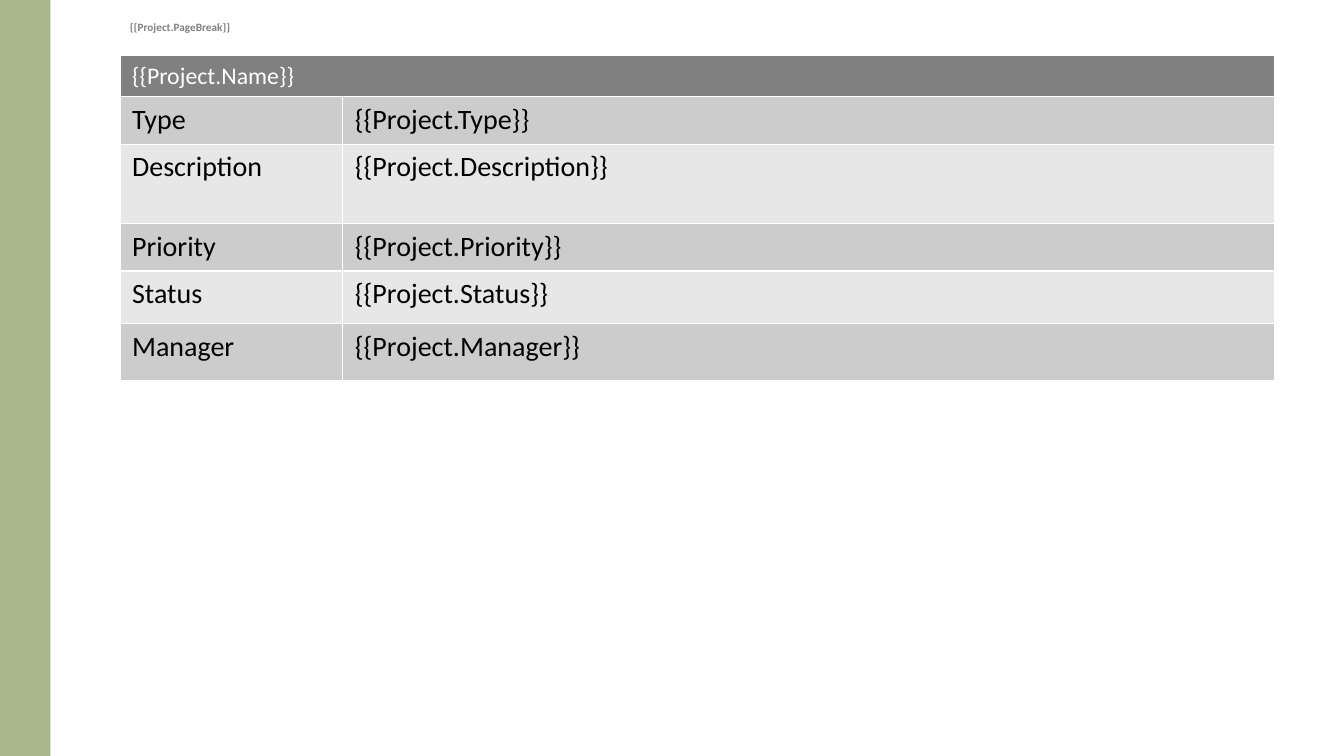
from lxml import etree
from pptx import Presentation
from pptx.dml.color import RGBColor
from pptx.enum import shapes
from pptx.oxml import ns
from pptx.util import Inches, Pt

FONT = "Calibri"


def rgb(value):
    return RGBColor.from_string(value)


def add_borders(cell, color, points):
    """Draw all four sides of a table cell; call before setting its fill."""
    properties = cell._tc.get_or_add_tcPr()
    for side in ("lnL", "lnR", "lnT", "lnB"):
        line = etree.SubElement(properties, ns.qn(f"a:{side}"), w=str(Pt(points)))
        fill = etree.SubElement(line, ns.qn("a:solidFill"))
        etree.SubElement(fill, ns.qn("a:srgbClr"), val=color)


prs = Presentation()
prs.slide_width, prs.slide_height = Inches(13.33), Inches(7.5)
slide = prs.slides.add_slide(prs.slide_layouts[6])

side_band = slide.shapes.add_shape(
    shapes.MSO_SHAPE.RECTANGLE, 0, 0, Inches(0.5), prs.slide_height)
side_band.shadow.inherit = False
side_band.fill.solid()
side_band.fill.fore_color.rgb = rgb("A7B789")
side_band.line.fill.background()

# Project table: a merged heading row, then one row per field
fields = ["Type", "Description", "Priority", "Status", "Manager"]
rows = [("{{Project.Name}}", "")]
rows += [(field, "{{Project.%s}}" % field) for field in fields]
row_heights = [0.41, 0.47, 0.79, 0.47, 0.52, 0.57]
column_widths = [2.21, 9.24]

project = slide.shapes.add_table(
    len(rows), 2, Inches(1.19), Inches(0.55),
    Inches(sum(column_widths)), Inches(sum(row_heights))).table
for column, width in zip(project.columns, column_widths):
    column.width = Inches(width)

for r, (values, height) in enumerate(zip(rows, row_heights)):
    project.rows[r].height = Inches(height)
    if r == 0:
        fill, ink, size = "808080", "FFFFFF", 17
    else:
        fill, ink, size = "CCCCCC" if r % 2 else "E7E7E7", "000000", 20
    for c, value in enumerate(values):
        cell = project.cell(r, c)
        cell.margin_left = cell.margin_right = Inches(0.12)
        cell.margin_top = cell.margin_bottom = Inches(0.06)
        add_borders(cell, "FFFFFF", 1)
        cell.fill.solid()
        cell.fill.fore_color.rgb = rgb(fill)
        cell.text_frame.text = value
        font = cell.text_frame.paragraphs[0].font
        for run in cell.text_frame.paragraphs[0].runs:
            run.font.name = FONT
            run.font.size = Pt(size)
            run.font.bold = False
            run.font.color.rgb = rgb(ink)
project.cell(0, 0).merge(project.cell(0, 1))

page_break = slide.shapes.add_textbox(
    Inches(1.19), Inches(0.15), Inches(5.54), Inches(0.24)).text_frame
page_break.word_wrap = True
page_break.text = "{{Project.PageBreak}}"
page_break_font = page_break.paragraphs[0].runs[0].font
page_break_font.name = FONT
page_break_font.size = Pt(8)
page_break_font.bold = True
page_break_font.color.rgb = rgb("808080")

prs.save("out.pptx")
